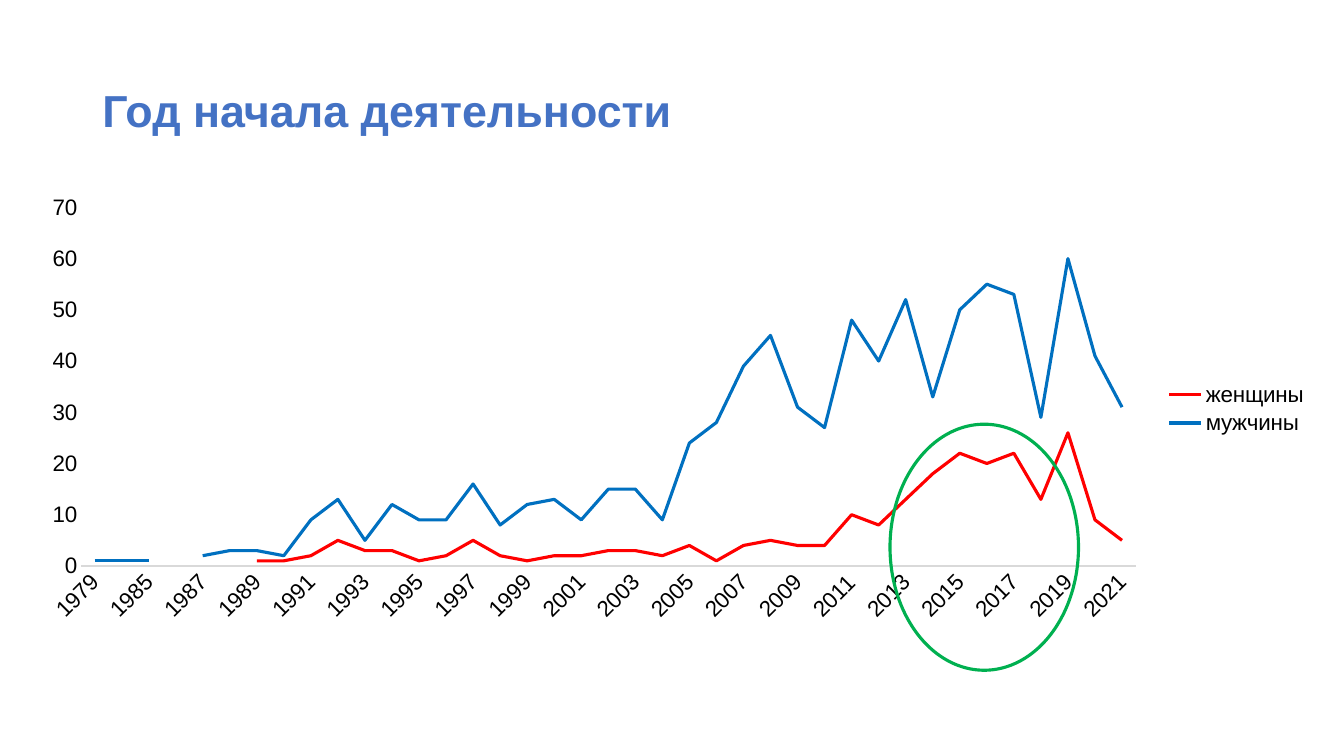
from collections import namedtuple
from dataclasses import dataclass

import pptx
import pptx.chart.data
import pptx.dml.color
import pptx.enum.chart
import pptx.enum.shapes
import pptx.enum.text
import pptx.oxml
import pptx.oxml.ns
import pptx.util
from pptx.util import Cm, Pt

Box = namedtuple("Box", "left top width height")


def rgb(code):
    return pptx.dml.color.RGBColor.from_string(code)


@dataclass(frozen=True)
class Theme:
    font: str = "Arial"
    title_size: float = 32
    chart_size: float = 16
    line_width: float = 2.25
    axis_width: float = 0.75
    title: str = "4472C4"
    text: str = "000000"
    axis: str = "D9D9D9"
    women: str = "FF0000"
    men: str = "0070C0"
    highlight: str = "00B050"


THEME = Theme()

YEARS = ["1979", "1982"] + [str(year) for year in range(1985, 2022)]
WOMEN = [None, None, None, 1, None, None, 1, 1, 2, 5, 3, 3, 1, 2, 5, 2, 1, 2, 2, 3,
         3, 2, 4, 1, 4, 5, 4, 4, 10, 8, 13, 18, 22, 20, 22, 13, 26, 9, 5]
MEN = [1, 1, 1, None, 2, 3, 3, 2, 9, 13, 5, 12, 9, 9, 16, 8, 12, 13, 9, 15,
       15, 9, 24, 28, 39, 45, 31, 27, 48, 40, 52, 33, 50, 55, 53, 29, 60, 41, 31]
SERIES = [("женщины", WOMEN, THEME.women), ("мужчины", MEN, THEME.men)]


def style_font(font, size, color, bold=False):
    font.name = THEME.font
    font.size = Pt(size)
    font.bold = bold
    font.color.rgb = rgb(color)


def add_title(page, box, text):
    frame = page.shapes.add_textbox(*map(Cm, box)).text_frame
    frame.word_wrap = True
    frame.vertical_anchor = pptx.enum.text.MSO_ANCHOR.MIDDLE
    para = frame.paragraphs[0]
    para.text = text
    para.line_spacing = 0.9
    style_font(para.font, THEME.title_size, THEME.title, bold=True)


def place_plot_area(chart, area):
    """Fix the inner plot area, given in fractions of the chart."""
    plot_area = chart.element.find(".//" + pptx.oxml.ns.qn("c:plotArea"))
    for layout in plot_area.findall(pptx.oxml.ns.qn("c:layout")):
        plot_area.remove(layout)
    places = "".join(f'<c:{tag} val="{value}"/>' for tag, value in zip("xywh", area))
    plot_area.insert(0, pptx.oxml.parse_xml(
        f'<c:layout {pptx.oxml.ns.nsdecls("c")}><c:manualLayout>'
        '<c:layoutTarget val="inner"/><c:xMode val="edge"/><c:yMode val="edge"/>'
        f'{places}</c:manualLayout></c:layout>'))


def slant_year_labels(chart, degrees, step):
    """Turn the year labels and show one in every step."""
    axis = chart.element.find(".//" + pptx.oxml.ns.qn("c:catAx"))
    body = axis.find(pptx.oxml.ns.qn("c:txPr") + "/" + pptx.oxml.ns.qn("a:bodyPr"))
    body.set("rot", str(degrees * 60000))
    body.set("vert", "horz")
    axis.find(pptx.oxml.ns.qn("c:lblOffset")).addnext(pptx.oxml.parse_xml(
        f'<c:tickLblSkip {pptx.oxml.ns.nsdecls("c")} val="{step}"/>'))


def add_year_chart(page, box):
    data = pptx.chart.data.CategoryChartData()
    data.categories = YEARS
    for name, values, _ in SERIES:
        data.add_series(name, values)
    chart = page.shapes.add_chart(
        pptx.enum.chart.XL_CHART_TYPE.LINE, *map(Cm, box), data).chart
    chart.has_title = False
    style_font(chart.font, THEME.chart_size, THEME.text)

    # Lines
    plot = chart.plots[0]
    plot.vary_by_categories = False
    for series, (_, _, color) in zip(plot.series, SERIES):
        series.smooth = False
        series.format.line.color.rgb = rgb(color)
        series.format.line.width = Pt(THEME.line_width)

    # Axes
    years, counts = chart.category_axis, chart.value_axis
    for axis in (years, counts):
        axis.has_major_gridlines = False
        axis.major_tick_mark = pptx.enum.chart.XL_TICK_MARK.NONE
        axis.minor_tick_mark = pptx.enum.chart.XL_TICK_MARK.NONE
        style_font(axis.tick_labels.font, THEME.chart_size, THEME.text)
    years.format.line.color.rgb = rgb(THEME.axis)
    years.format.line.width = Pt(THEME.axis_width)
    counts.format.line.fill.background()
    counts.minimum_scale, counts.maximum_scale, counts.major_unit = 0, 70, 10
    slant_year_labels(chart, degrees=-45, step=2)

    # Legend
    chart.has_legend = True
    chart.legend.position = pptx.enum.chart.XL_LEGEND_POSITION.RIGHT
    chart.legend.include_in_layout = False
    style_font(chart.legend.font, THEME.chart_size, THEME.text)
    place_plot_area(chart, (0.043, 0.047, 0.815, 0.807))


def add_highlight(page, box):
    ring = page.shapes.add_shape(pptx.enum.shapes.MSO_SHAPE.OVAL, *map(Cm, box))
    ring.shadow.inherit = False
    ring.fill.background()
    ring.line.color.rgb = rgb(THEME.highlight)
    ring.line.width = Pt(THEME.line_width)


def main():
    deck = pptx.Presentation()
    deck.slide_width, deck.slide_height = Cm(33.87), Cm(19.05)
    page = deck.slides.add_slide(deck.slide_layouts[6])
    add_title(page, Box(2.33, 1.01, 29.21, 3.68), "Год начала деятельности")
    add_year_chart(page, Box(0.64, 4.7, 32.61, 11.2))
    add_highlight(page, Box(22.43, 10.69, 4.75, 6.2))
    deck.save("out.pptx")


if __name__ == "__main__":
    main()
